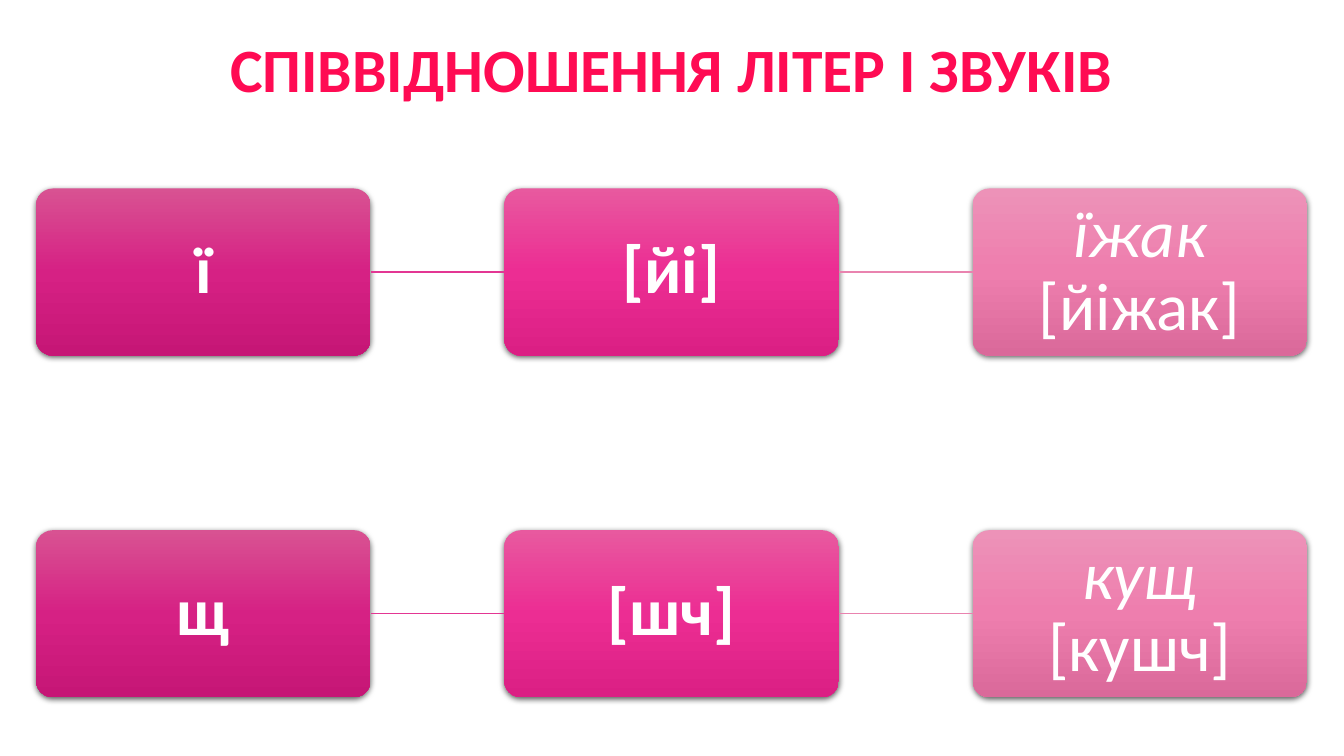
import pptx
import pptx.dml.color
import pptx.enum.shapes
import pptx.enum.text
import pptx.oxml
import pptx.oxml.ns
import pptx.util
from lxml import etree

Cm = pptx.util.Cm
Pt = pptx.util.Pt
qn = pptx.oxml.ns.qn

FONT = "Calibri"
CARD_WIDTH, CARD_HEIGHT, CARD_PITCH = 8.43, 4.21, 11.8
CARD_GRADIENTS = [
    ("D85292", "D62184", "C61676"),
    ("E8599F", "EC2D93", "DB1F84"),
    ("ED92B8", "EE7EAE", "DA699A"),
]
LINK_COLOURS = ["E33693", "E983AF"]
ROWS = [
    ("ї", "[йі]", "їжак\v[йіжак]"),
    ("щ", "[шч]", "кущ\v[кушч]"),
]


def colour(hex_text):
    return pptx.dml.color.RGBColor.from_string(hex_text)


def write_text(shape, text, size, hex_text, bold):
    """Fill a shape with one centred paragraph."""
    frame = shape.text_frame
    frame.word_wrap = True
    frame.vertical_anchor = pptx.enum.text.MSO_ANCHOR.MIDDLE
    para = frame.paragraphs[0]
    para.text = text
    para.alignment = pptx.enum.text.PP_ALIGN.CENTER
    para.line_spacing = 0.9
    for span in para.runs:
        span.font.name = FONT
        span.font.size = Pt(size)
        span.font.bold = bold
        span.font.color.rgb = colour(hex_text)
    return para


def fill_gradient(shape, colours):
    """Run evenly spaced colours from top to bottom."""
    shape.fill.gradient()
    shape.fill.gradient_angle = 270
    stops = shape._element.spPr.find(".//" + qn("a:gsLst"))
    for stop in list(stops):
        stops.remove(stop)
    for index, hex_text in enumerate(colours):
        position = index * 100000 // (len(colours) - 1)
        stop = etree.SubElement(stops, qn("a:gs"), pos=str(position))
        etree.SubElement(stop, qn("a:srgbClr"), val=hex_text)


def add_soft_shadow(shape):
    shape.shadow.inherit = False
    effects = shape._element.spPr.find(qn("a:effectLst"))
    shadow = etree.SubElement(
        effects, qn("a:outerShdw"), blurRad=str(Pt(4.5)), dist=str(Pt(1.5)),
        dir="5400000", algn="ctr", rotWithShape="0")
    black = etree.SubElement(shadow, qn("a:srgbClr"), val="000000")
    etree.SubElement(black, qn("a:alpha"), val="63000")


def add_title(page, left, top, width, height):
    box = page.shapes.add_textbox(Cm(left), Cm(top), Cm(width), Cm(height))
    write_text(box, "СПІВВІДНОШЕННЯ ЛІТЕР І ЗВУКІВ", 44, "FF0B53", True)


def add_card(page, left, top, text, colours):
    card = page.shapes.add_shape(
        pptx.enum.shapes.MSO_SHAPE.ROUNDED_RECTANGLE,
        Cm(left), Cm(top), Cm(CARD_WIDTH), Cm(CARD_HEIGHT))
    card.adjustments[0] = 0.1
    card.line.fill.background()
    fill_gradient(card, colours)
    add_soft_shadow(card)
    frame = card.text_frame
    frame.margin_left = frame.margin_right = Cm(0.2)
    frame.margin_top = frame.margin_bottom = Cm(0.2)
    is_example = "\v" in text
    para = write_text(card, text, 48, "FFFFFF", not is_example)
    para.runs[0].font.italic = is_example
    return card


def add_link(page, start, end, hex_text):
    link = page.shapes.add_connector(
        pptx.enum.shapes.MSO_CONNECTOR.STRAIGHT, 0, 0, 0, 0)
    link.begin_connect(start, 3)
    link.end_connect(end, 1)
    link.line.color.rgb = colour(hex_text)
    link.line.width = Pt(1)
    etree.SubElement(link._element.spPr, qn("a:effectLst"))


def add_row(page, left, top, texts):
    """Letter, sound and example word, joined from left to right."""
    cards = [
        add_card(page, left + index * CARD_PITCH, top, text, colours)
        for index, (text, colours) in enumerate(zip(texts, CARD_GRADIENTS))
    ]
    for start, end, hex_text in zip(cards, cards[1:], LINK_COLOURS):
        add_link(page, start, end, hex_text)


def main():
    deck = pptx.Presentation()
    deck.slide_width, deck.slide_height = Cm(33.87), Cm(19.05)
    page = deck.slides.add_slide(deck.slide_layouts[6])
    add_title(page, 2.33, 0, 29.21, 3.68)
    for index, texts in enumerate(ROWS):
        add_row(page, 0.91, 4.75 + index * 8.61, texts)
    deck.save("out.pptx")


if __name__ == "__main__":
    main()
